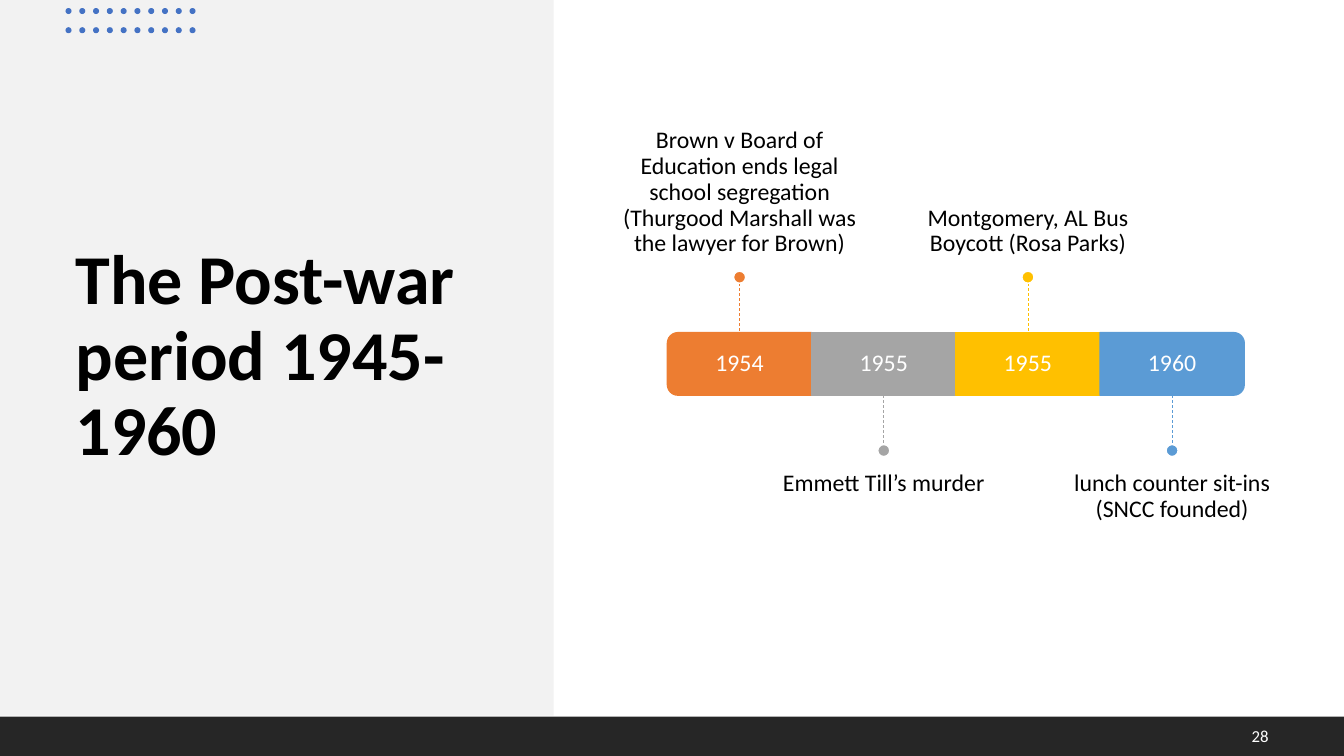
from dataclasses import dataclass

from lxml import etree
from pptx import Presentation
from pptx.dml.color import RGBColor
from pptx.enum import dml, shapes, text
from pptx.oxml import ns
from pptx.shapes.autoshape import Shape
from pptx.slide import Slide
from pptx.util import Inches, Pt

BLACK = RGBColor(0x00, 0x00, 0x00)
WHITE = RGBColor(0xFF, 0xFF, 0xFF)
PALE = RGBColor(0xF2, 0xF2, 0xF2)
DARK = RGBColor(0x26, 0x26, 0x26)
BLUE = RGBColor(0x44, 0x72, 0xC4)
ORANGE = RGBColor(0xED, 0x7D, 0x31)
GREY = RGBColor(0xA5, 0xA5, 0xA5)
GOLD = RGBColor(0xFF, 0xC0, 0x00)
SKY = RGBColor(0x5B, 0x9B, 0xD5)

FORM = shapes.MSO_SHAPE
ANCHOR = text.MSO_ANCHOR
ALIGN = text.PP_ALIGN

BAR_LEFT, BAR_TOP, BAR_WIDTH, BAR_HEIGHT = 6.62, 3.3, 1.43, 0.62
STEM, DOT = 0.49, 0.12
NOTE_WIDTH, NOTE_HEIGHT = 2.39, 2.18


@dataclass(frozen=True)
class Box:
    left: float
    top: float
    width: float
    height: float

    def spread(self) -> tuple[Inches, Inches, Inches, Inches]:
        return Inches(self.left), Inches(self.top), Inches(self.width), Inches(self.height)


@dataclass(frozen=True)
class Event:
    year: str
    note: str
    color: RGBColor
    above: bool
    turn: int = 0


EVENTS = [
    Event("1954", "Brown v Board of Education ends legal school segregation "
          "(Thurgood Marshall was the lawyer for Brown)", ORANGE, True, 270),
    Event("1955", "Emmett Till’s murder", GREY, False),
    Event("1955", "Montgomery, AL Bus Boycott (Rosa Parks)", GOLD, True),
    Event("1960", "lunch counter sit-ins (SNCC founded)", SKY, False, 90),
]


def add_form(slide: Slide, form: FORM, box: Box, fill: RGBColor,
             line: RGBColor | None = None) -> Shape:
    shape = slide.shapes.add_shape(form, *box.spread())
    shape.shadow.inherit = False
    shape.fill.solid()
    shape.fill.fore_color.rgb = fill
    if line is None:
        shape.line.fill.background()
    else:
        shape.line.color.rgb = line
        shape.line.width = Pt(1)
    return shape


def add_label(slide: Slide, words: str, box: Box, size: float, color: RGBColor,
              anchor: ANCHOR, align: ALIGN, pads: tuple[float, float, float, float],
              space: float = 1.0) -> None:
    frame = slide.shapes.add_textbox(*box.spread()).text_frame
    frame.word_wrap = True
    frame.vertical_anchor = anchor
    frame.margin_left, frame.margin_top, frame.margin_right, frame.margin_bottom = map(Inches, pads)
    para = frame.paragraphs[0]
    para.text = words
    para.alignment = align
    para.line_spacing = space
    para.font.name = "Calibri"
    para.font.size = Pt(size)
    para.font.color.rgb = color


def add_stem(slide: Slide, x: float, top: float, color: RGBColor) -> None:
    stem = slide.shapes.add_connector(
        shapes.MSO_CONNECTOR.STRAIGHT, Inches(x), Inches(top), Inches(x), Inches(top + STEM))
    stem.line.color.rgb = color
    stem.line.width = Pt(0.5)
    stem.line.dash_style = dml.MSO_LINE.DASH
    etree.SubElement(stem.element.spPr, ns.qn("a:effectLst"))


def add_event(slide: Slide, event: Event, index: int) -> None:
    left = BAR_LEFT + index * BAR_WIDTH
    mid = left + BAR_WIDTH / 2
    bar = Box(left, BAR_TOP, BAR_WIDTH, BAR_HEIGHT)
    if event.turn:
        tall = Box(mid - BAR_HEIGHT / 2, BAR_TOP + (BAR_HEIGHT - BAR_WIDTH) / 2,
                   BAR_HEIGHT, BAR_WIDTH)
        cap = add_form(slide, FORM.ROUND_2_SAME_RECTANGLE, tall, event.color, event.color)
        cap.rotation = event.turn
    else:
        add_form(slide, FORM.RECTANGLE, bar, event.color, event.color)
    add_label(slide, event.year, bar, 17, WHITE, ANCHOR.MIDDLE, ALIGN.CENTER, (0.14,) * 4, 0.9)

    if event.above:
        stem_top = BAR_TOP - STEM
        dot_top = stem_top - DOT
        note_top = dot_top - NOTE_HEIGHT
        anchor, pads = ANCHOR.BOTTOM, (0, 0, 0, 0.14)
    else:
        stem_top = BAR_TOP + BAR_HEIGHT
        dot_top = stem_top + STEM
        note_top = dot_top + DOT
        anchor, pads = ANCHOR.TOP, (0, 0.14, 0, 0)
    note = Box(mid - NOTE_WIDTH / 2, note_top, NOTE_WIDTH, NOTE_HEIGHT)
    add_label(slide, event.note, note, 17, BLACK, anchor, ALIGN.CENTER, pads, 0.9)
    add_stem(slide, mid, stem_top, event.color)
    add_form(slide, FORM.OVAL, Box(mid - DOT / 2, dot_top, DOT, DOT), event.color, WHITE)


def set_title(slide: Slide) -> None:
    title = slide.shapes.title
    title.left, title.top, title.width, title.height = Box(0.65, 1.32, 4.24, 4.45).spread()
    frame = title.text_frame
    frame.text = "The Post-war period 1945-1960"
    frame.word_wrap = True
    frame.auto_size = text.MSO_AUTO_SIZE.NONE
    frame.vertical_anchor = ANCHOR.MIDDLE
    para = frame.paragraphs[0]
    para.alignment = ALIGN.LEFT
    para.line_spacing = 0.9
    para.font.name = "Calibri"
    para.font.size = Pt(50)
    para.font.bold = True
    para.font.color.rgb = BLACK


def main() -> None:
    deck = Presentation()
    deck.slide_width, deck.slide_height = Inches(13.33), Inches(7.5)
    slide = deck.slides.add_slide(deck.slide_layouts[5])

    panel = add_form(slide, FORM.RECTANGLE, Box(0, 0, 5.49, 7.1), PALE)
    slide.shapes.title.element.addprevious(panel.element)
    set_title(slide)

    for row in range(2):
        for col in range(10):
            dot = Box(0.65 + col * 1.23 / 9, 0.08 + row * 0.19, 0.06, 0.06)
            add_form(slide, FORM.OVAL, dot, BLUE)

    add_form(slide, FORM.RECTANGLE, Box(0, 7.11, 13.33, 0.39), DARK)
    add_label(slide, "28", Box(9.68, 7.1, 3, 0.4), 12, WHITE,
              ANCHOR.MIDDLE, ALIGN.RIGHT, (0.1, 0.05, 0.1, 0.05))

    for index, event in enumerate(EVENTS):
        add_event(slide, event, index)

    deck.save("out.pptx")


if __name__ == "__main__":
    main()
